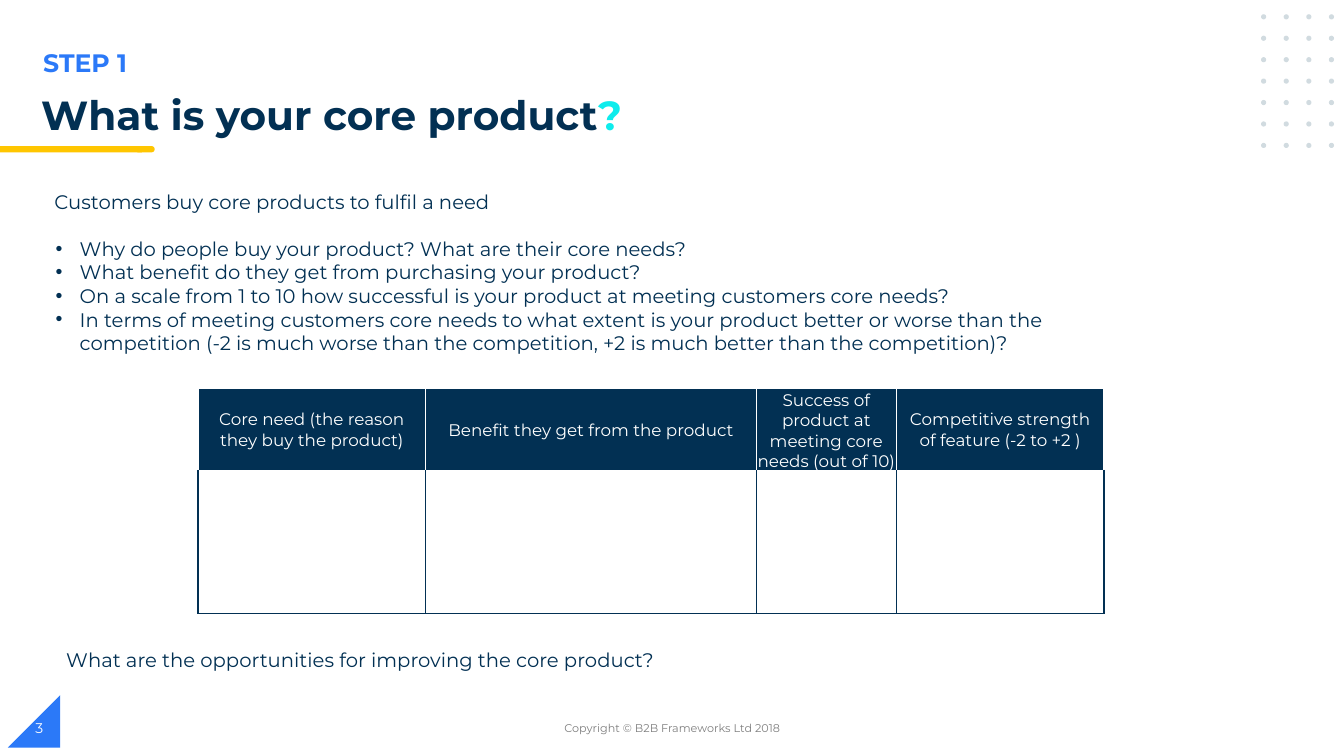
from dataclasses import dataclass

from lxml import etree
from pptx import Presentation
from pptx.dml.color import RGBColor
from pptx.enum.shapes import MSO_SHAPE
from pptx.enum.text import MSO_ANCHOR, PP_ALIGN
from pptx.oxml.ns import qn
from pptx.util import Cm, Pt

RECTANGLE = MSO_SHAPE.RECTANGLE
OVAL = MSO_SHAPE.OVAL
TERMINATOR = MSO_SHAPE.FLOWCHART_TERMINATOR
TRIANGLE = MSO_SHAPE.RIGHT_TRIANGLE
LEFT, CENTER = PP_ALIGN.LEFT, PP_ALIGN.CENTER
TOP, MIDDLE = MSO_ANCHOR.TOP, MSO_ANCHOR.MIDDLE


@dataclass(frozen=True)
class Theme:
    font: str = "Montserrat"
    navy: str = "023053"
    blue: str = "2B79F8"
    cyan: str = "0EECEC"
    yellow: str = "FFC600"
    dot: str = "D1DBE0"
    gray: str = "7F7F7F"
    white: str = "FFFFFF"
    title: int = 29
    step: int = 18
    body: int = 14
    table: int = 12
    number: int = 10
    footer: int = 8


class SlideBuilder:
    def __init__(self, page, theme):
        self.page = page
        self.theme = theme

    def shape(self, kind, left, top, width, height, color, flipped=False):
        shape = self.page.shapes.add_shape(kind, Cm(left), Cm(top), Cm(width), Cm(height))
        shape.shadow.inherit = False
        shape.fill.solid()
        shape.fill.fore_color.rgb = RGBColor.from_string(color)
        shape.line.fill.background()
        if flipped:
            shape.element.spPr.find(qn("a:xfrm")).set("flipH", "1")

    def span(self, para, text, size, color, bold=False):
        span = para.add_run()
        span.text = text
        span.font.name = self.theme.font
        span.font.size = Pt(size)
        span.font.bold = bold
        span.font.color.rgb = RGBColor.from_string(color)

    def text(self, left, top, width, height, spans, size, bold=False,
             align=LEFT, anchor=TOP, line_spacing=None):
        box = self.page.shapes.add_textbox(Cm(left), Cm(top), Cm(width), Cm(height))
        frame = box.text_frame
        frame.word_wrap = True
        frame.vertical_anchor = anchor
        para = frame.paragraphs[0]
        para.alignment = align
        if line_spacing:
            para.line_spacing = line_spacing
        for text, color in spans:
            self.span(para, text, size, color, bold)
        return frame

    def bullets(self, frame, items, size, color, gap):
        for index, item in enumerate(items):
            para = frame.add_paragraph()
            properties = para._p.get_or_add_pPr()
            properties.set("marL", str(Cm(0.64)))
            properties.set("indent", str(Cm(-0.61)))
            bullet_color = etree.SubElement(properties, qn("a:buClr"))
            etree.SubElement(bullet_color, qn("a:srgbClr"), val=color)
            etree.SubElement(properties, qn("a:buFont"), typeface="Arial")
            etree.SubElement(properties, qn("a:buChar"), char="•")
            if index == 0:
                para.space_before = Pt(gap)
            self.span(para, item, size, color)

    def borders(self, cell, side_color, top_color, bottom_color):
        properties = cell._tc.get_or_add_tcPr()
        sides = {"L": side_color, "R": side_color, "T": top_color, "B": bottom_color}
        for side, color in sides.items():
            line = etree.SubElement(properties, qn(f"a:ln{side}"), w=str(Pt(1)))
            fill = etree.SubElement(line, qn("a:solidFill"))
            etree.SubElement(fill, qn("a:srgbClr"), val=color)

    def table(self, left, top, widths, heights, headings):
        theme = self.theme
        table = self.page.shapes.add_table(
            len(heights), len(widths), Cm(left), Cm(top), Cm(sum(widths)), Cm(sum(heights))
        ).table
        table.horz_banding = False
        for row, height in zip(table.rows, heights):
            row.height = Cm(height)
        for index, (width, lines) in enumerate(zip(widths, headings)):
            table.columns[index].width = Cm(width)
            heading, answer = table.cell(0, index), table.cell(1, index)
            self.borders(heading, theme.white, theme.white, theme.white)
            self.borders(answer, theme.navy, theme.white, theme.navy)
            answer.fill.background()
            heading.fill.solid()
            heading.fill.fore_color.rgb = RGBColor.from_string(theme.navy)
            heading.vertical_anchor = MIDDLE
            heading.margin_left = heading.margin_right = heading.margin_top = Cm(0.03)
            heading.margin_bottom = 0
            para = heading.text_frame.paragraphs[0]
            para.alignment = CENTER
            for number, line in enumerate(lines):
                if number:
                    para.add_line_break()
                self.span(para, line, theme.table, theme.white)


def main():
    deck = Presentation()
    deck.slide_width, deck.slide_height = Cm(33.87), Cm(19.05)
    theme = Theme()
    slide = SlideBuilder(deck.slides.add_slide(deck.slide_layouts[6]), theme)

    slide.shape(TRIANGLE, 0.2, 17.52, 1.32, 1.32, theme.blue, flipped=True)
    for row in range(7):
        for column in range(4):
            slide.shape(OVAL, 31.78 + 0.57 * column, 0.36 + 0.54 * row, 0.13, 0.13, theme.dot)
    slide.shape(TERMINATOR, 3.4, 3.68, 0.5, 0.16, theme.yellow)
    slide.shape(RECTANGLE, 0, 3.68, 3.58, 0.16, theme.yellow)

    slide.text(0.84, 1.07, 17, 1.02, [("STEP 1", theme.blue)], theme.step, bold=True)
    slide.text(0.79, 2.29, 17.93, 1.52,
               [("What is your core product", theme.navy), ("?", theme.cyan)],
               theme.title, bold=True, line_spacing=0.9)

    slide.table(4.99, 9.79, [5.74, 8.33, 3.53, 5.23], [2.06, 3.6], [
        ["Core need (the reason", "they buy the product)"],
        ["Benefit they get from the product"],
        ["Success of product at meeting core needs (out of 10)"],
        ["Competitive strength", "of feature (-2 to +2 )"],
    ])

    questions = slide.text(1.12, 4.65, 26.92, 4.45,
                           [("Customers buy core products to fulfil a need", theme.navy)],
                           theme.body)
    slide.bullets(questions, [
        "Why do people buy your product? What are their core needs?",
        "What benefit do they get from purchasing your product?",
        "On a scale from 1 to 10 how successful is your product at meeting "
        "customers core needs?",
        "In terms of meeting customers core needs to what extent is your product "
        "better or worse than the competition (-2 is much worse than the competition, "
        "+2 is much better than the competition)?",
    ], theme.body, theme.navy, gap=17)

    slide.text(1.42, 16.21, 22.94, 0.86,
               [("What are the opportunities for improving the core product?", theme.navy)],
               theme.body)
    slide.text(11.23, 17.83, 11.43, 1.02,
               [("Copyright © B2B Frameworks Ltd 2018", theme.gray)],
               theme.footer, align=CENTER, anchor=MIDDLE)
    slide.text(0.64, 17.83, 7.62, 1.02, [("3", theme.white)], theme.number, anchor=MIDDLE)

    deck.save("out.pptx")


if __name__ == "__main__":
    main()
